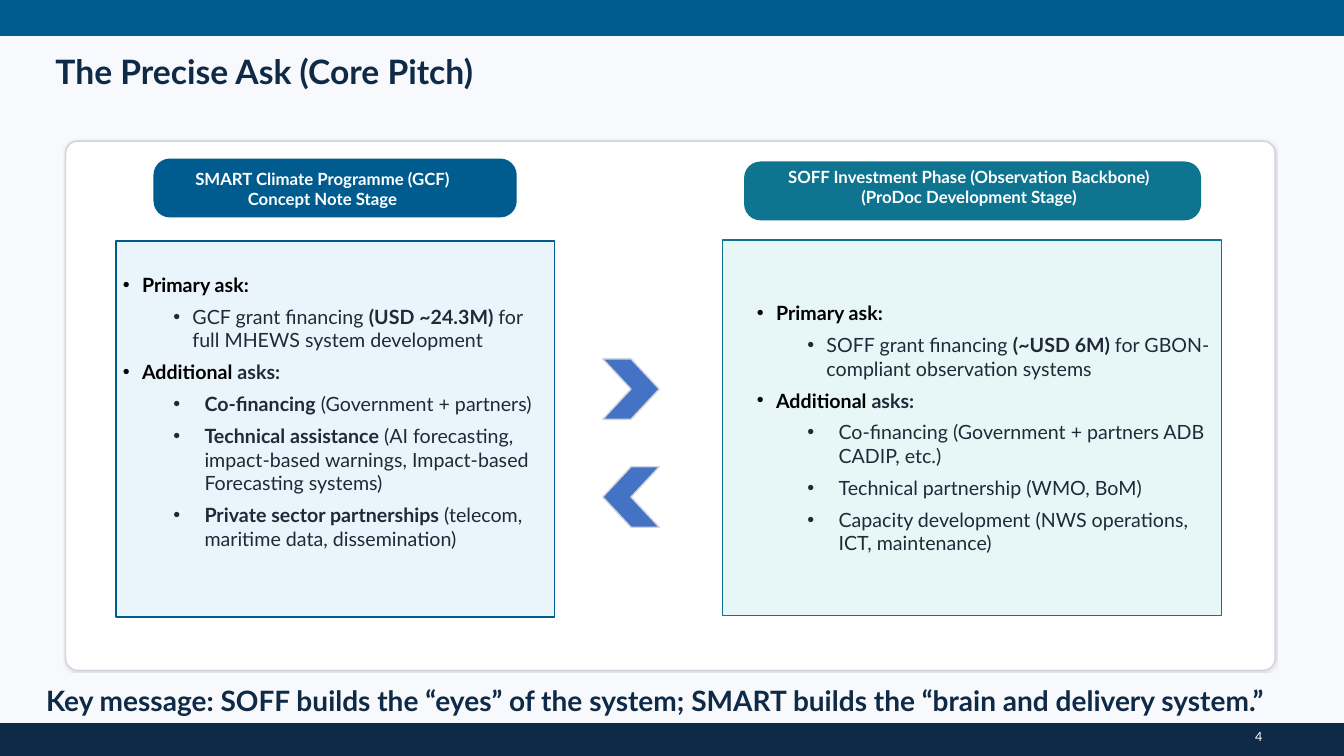
from pptx import Presentation
from pptx.dml.color import RGBColor
from pptx.enum.shapes import MSO_SHAPE as Form
from pptx.enum.text import MSO_ANCHOR as Anchor, MSO_AUTO_SIZE as Fit, PP_ALIGN as Align
from pptx.oxml import parse_xml
from pptx.oxml.ns import nsdecls
from pptx.util import Inches, Pt
from lxml.etree import SubElement

WIDE, HIGH = Inches(13.33), Inches(7.5)
BLUE, TEAL, NAVY, INK, GREY = "005B8F", "0E7490", "0E2A47", "1F2937", "D0D5DD"
WHITE, BLACK = "FFFFFF", "000000"
INDENTS = {"head": (0.19, 0.19), "lead": (0.69, 0.19), "item": (0.81, 0.31)}
PRIME = ("head", [("Primary ask:", True, BLACK)])
MORE = ("head", [("Additional", True, BLACK), (" asks:", True, INK)])


def hue(code):
    return RGBColor.from_string(code)


def place(box):
    x, y, w, h = box
    return [int(share * side / 100) for share, side in
            ((x, WIDE), (y, HIGH), (w, WIDE), (h, HIGH))]


def inset(box, part):
    return (box[0] + part[0], box[1] + part[1], part[2], part[3])


def draw(slide, form, box, fill, line, adj=None):
    shape = slide.shapes.add_shape(form, *place(box))
    shape.shadow.inherit = False
    shape.fill.solid()
    shape.fill.fore_color.rgb = hue(fill)
    shape.line.color.rgb = hue(line)
    shape.line.width = Pt(1)
    if adj is not None:
        shape.adjustments[0] = adj
    return shape


def prep(frame, anchor=Anchor.MIDDLE):
    frame.word_wrap = True
    frame.auto_size = Fit.NONE
    frame.vertical_anchor = anchor
    frame.margin_left = frame.margin_right = 0
    frame.margin_top = frame.margin_bottom = 0
    return frame


def field(slide, box):
    return prep(slide.shapes.add_textbox(*place(box)).text_frame)


def write(para, text, size=14, color=INK, bold=False, align=Align.LEFT):
    para.alignment = align
    run = para.add_run()
    run.text = text
    run.font.name = "Lato"
    run.font.size = Pt(size)
    run.font.bold = bold
    run.font.color.rgb = hue(color)


def grow(frame, count):
    return [frame.paragraphs[0]] + [frame.add_paragraph() for _ in range(count - 1)]


def bullet(para, kind, first):
    left, hang = INDENTS[kind]
    para.level = 0 if kind == "head" else 1
    if not first:
        para.space_before = Pt(6)
    props = para._p.get_or_add_pPr()
    props.set("marL", str(Inches(left)))
    props.set("indent", str(-Inches(hang)))
    font = SubElement(props, props.tag.replace("pPr", "buFont"))
    font.set("typeface", "Arial")
    SubElement(props, props.tag.replace("pPr", "buChar")).set("char", "•")


def panel(slide, box, tint, color, pill, label, title, body, rows):
    draw(slide, Form.ROUNDED_RECTANGLE, inset(box, pill), color, color, 0.273)
    frame = field(slide, inset(box, label))
    for para, line in zip(grow(frame, len(title)), title):
        write(para, line, size=12, color=WHITE, bold=True, align=Align.CENTER)
    draw(slide, Form.RECTANGLE, box, tint, color)
    paras = grow(field(slide, inset(box, body)), len(rows))
    for i, (para, (kind, runs)) in enumerate(zip(paras, rows)):
        bullet(para, kind, i == 0)
        for text, bold, *shade in runs:
            write(para, text, bold=bold, color=shade[0] if shade else INK)


def card(slide, box):
    shape = draw(slide, Form.ROUNDED_RECTANGLE, box, WHITE, GREY, 0.023)
    props = shape._element.spPr
    glow = parse_xml(
        f'<a:outerShdw {nsdecls("a")} blurRad="{Pt(1)}" dist="{Pt(0.5)}" dir="2700000">'
        '<a:srgbClr val="000000"><a:alpha val="10000"/></a:srgbClr></a:outerShdw>')
    props.find(glow.tag.replace("outerShdw", "effectLst")).append(glow)


def swap(slide, box, step):
    x, y, w, h = box
    for i in range(2):
        arrow = draw(slide, Form.CHEVRON, (x, y + i * step, w, h), "4472C4", GREY)
        arrow.rotation = 180 * i


def header(slide, bar, box):
    draw(slide, Form.RECTANGLE, bar, BLUE, BLUE)
    title = slide.shapes.title
    title.left, title.top, title.width, title.height = place(box)
    para = prep(title.text_frame).paragraphs[0]
    write(para, "The Precise Ask (Core Pitch)", size=24, color=NAVY, bold=True)


def footer(slide, bar, note, page):
    draw(slide, Form.RECTANGLE, bar, NAVY, NAVY)
    write(field(slide, note).paragraphs[0],
          "Key message: SOFF builds the “eyes” of the system; "
          "SMART builds the “brain and delivery system.”",
          size=20, color=NAVY, bold=True, align=Align.CENTER)
    write(field(slide, page).paragraphs[0], "4", size=9, color=WHITE)


def main():
    deck = Presentation()
    deck.slide_width, deck.slide_height = WIDE, HIGH
    slide = deck.slides.add_slide(deck.slide_layouts[5])
    slide.background.fill.solid()
    slide.background.fill.fore_color.rgb = hue("F7F9FC")

    header(slide, (0, 0, 100, 4.67), (4.13, 6.4, 74.25, 6))
    card(slide, (4.88, 18.67, 90, 70))
    panel(slide, (8.62, 31.87, 32.62, 49.73), "EAF4FB", BLUE,
          pill=(2.85, -10.8, 26.92, 7.6), label=(3.98, -9.47, 22.8, 5.07),
          title=["SMART Climate Programme (GCF)", "Concept Note Stage"],
          body=(0.52, 3.87, 31.5, 37.33),
          rows=[PRIME,
                ("lead", [("GCF grant financing ", False), ("(USD ~24.3M) ", True),
                          ("for full MHEWS system development", False)]),
                MORE,
                ("item", [("Co-financing", True), (" (Government + partners)", False)]),
                ("item", [("Technical assistance ", True),
                          ("(AI forecasting, impact-based warnings, "
                           "Impact-based Forecasting systems)", False)]),
                ("item", [("Private sector partnerships ", True),
                          ("(telecom, maritime data, dissemination)", False)])])
    panel(slide, (53.77, 31.73, 37.12, 49.73), "E7F7F8", TEAL,
          pill=(1.65, -10.27, 33.9, 7.6), label=(2.55, -8.8, 31.57, 3.47),
          title=["SOFF Investment Phase (Observation Backbone) "
                 "(ProDoc Development Stage)"],
          body=(2.55, 3.87, 33.9, 42),
          rows=[PRIME,
                ("lead", [("SOFF grant financing ", False), ("(~USD 6M) ", True),
                          ("for GBON-compliant observation systems", False)]),
                MORE,
                ("item", [("Co-financing (Government + partners ADB CADIP, etc.)", False)]),
                ("item", [("Technical partnership (WMO, BoM)", False)]),
                ("item", [("Capacity development (NWS operations, ICT, maintenance)",
                           False)])])
    swap(slide, (44.85, 47.47, 4.2, 8), 14.27)
    footer(slide, (0, 95.73, 100, 4.27), (2.62, 89.6, 92.25, 6), (93.38, 96.2, 3, 2.4))
    deck.save("out.pptx")


if __name__ == "__main__":
    main()
